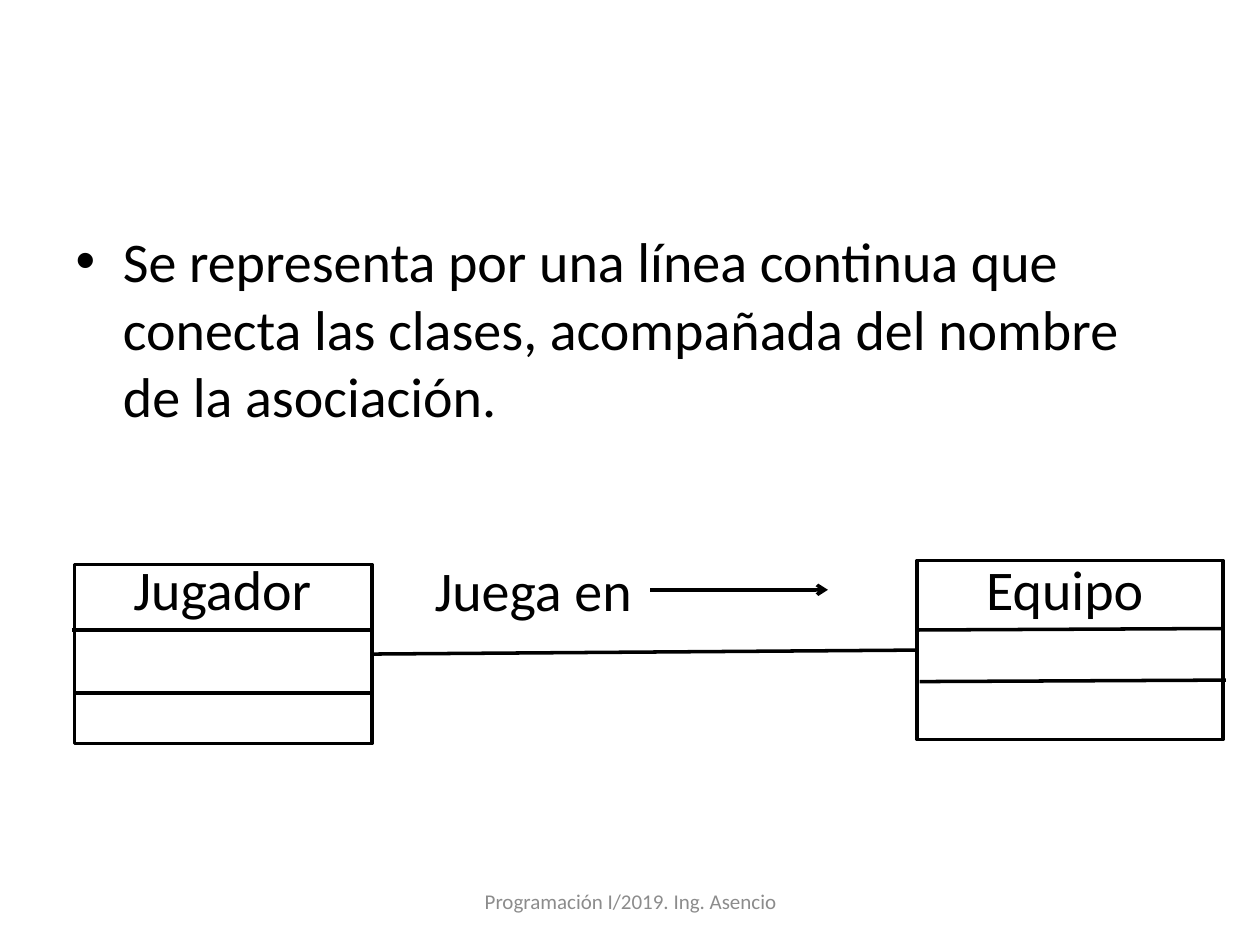
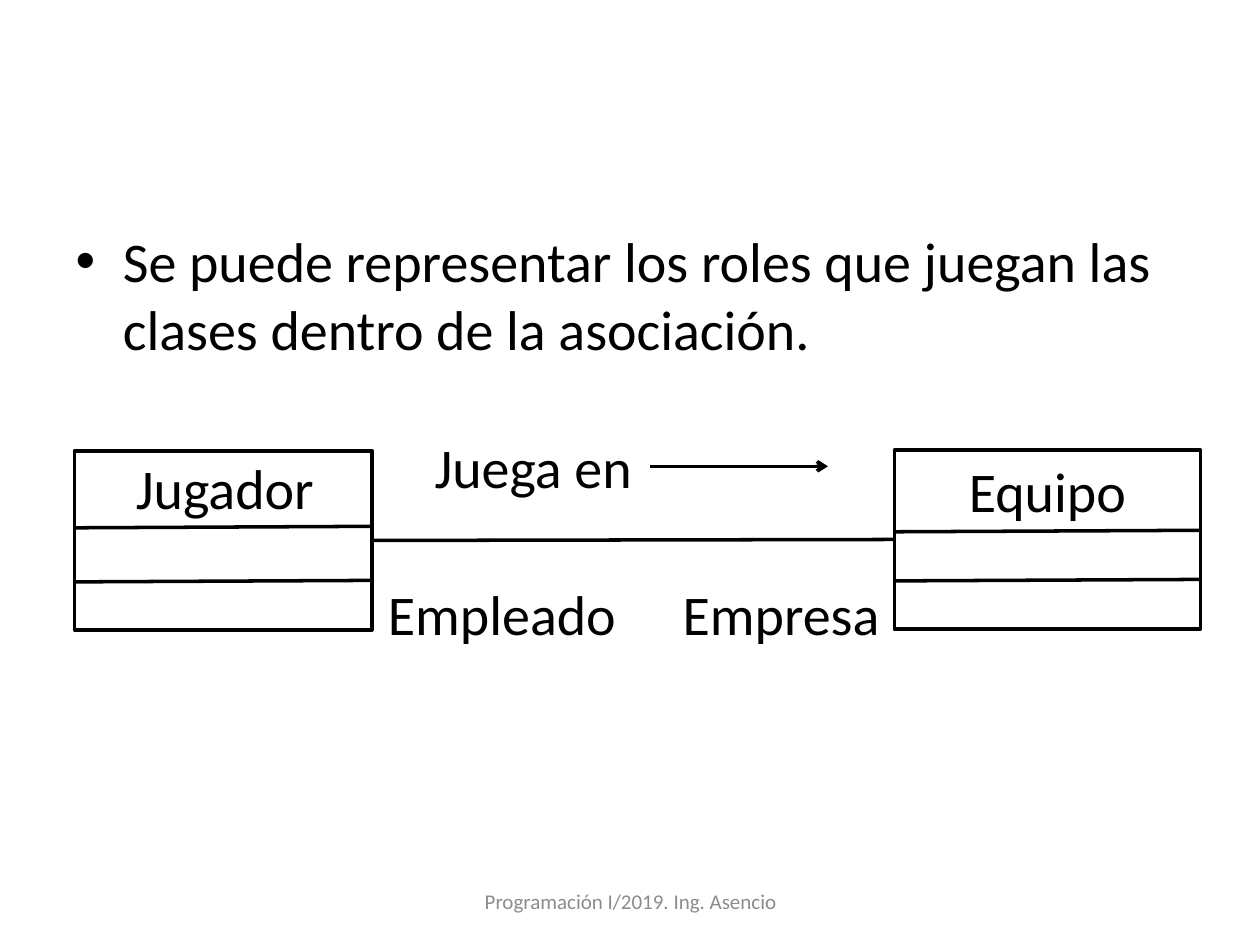
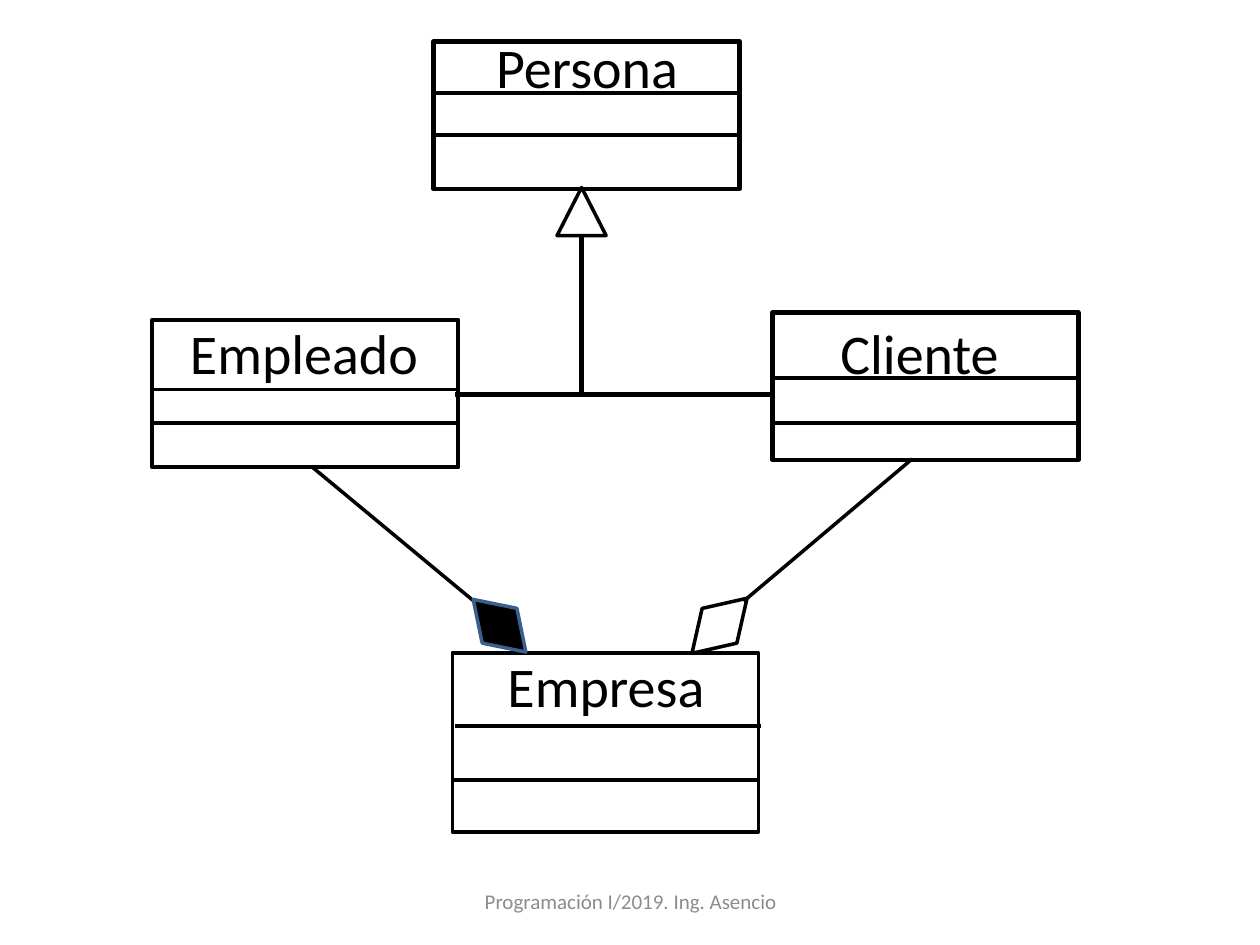
import dataclasses

import pptx
import pptx.dml.color
import pptx.enum.shapes
import pptx.enum.text
import pptx.oxml
import pptx.oxml.ns
import pptx.util

Cm = pptx.util.Cm
Pt = pptx.util.Pt
SHAPE = pptx.enum.shapes.MSO_SHAPE
ALIGN = pptx.enum.text.PP_ALIGN
ANCHOR = pptx.enum.text.MSO_ANCHOR


@dataclasses.dataclass(frozen=True)
class Theme:
    font: str = "Calibri"
    ink: str = "000000"
    muted: str = "8C8C8C"
    diamond_edge: str = "3A5F8C"
    text_size: float = 32
    footer_size: float = 12
    thin: float = 2
    thick: float = 2.5


THEME = Theme()
FOOTER = "Programación I/2019. Ing. Asencio"
CLASS_WIDTH = 6.17
LABEL_HEIGHT = 1.63
LABEL_WIDTHS = {"Jugador": 4.14, "Equipo": 3.71, "Empleado": 5.16,
                "Empresa": 4.52, "Cliente": 3.73, "Persona": 4.22}


def set_values(target, values):
    for name, value in values.items():
        setattr(target, name, value)


def rgb(color):
    return pptx.dml.color.RGBColor.from_string(color)


def format_span(span, size=THEME.text_size, color=THEME.ink):
    set_values(span.font, {"name": THEME.font, "size": Pt(size)})
    span.font.color.rgb = rgb(color)


def format_line(line, weight, color=THEME.ink):
    line.color.rgb = rgb(color)
    line.width = Pt(weight)


def add_text(page, text, left, top, width, height=LABEL_HEIGHT, wrap=False,
             size=THEME.text_size, color=THEME.ink, anchor=ANCHOR.TOP, align=ALIGN.LEFT):
    box = page.shapes.add_textbox(Cm(left), Cm(top), Cm(width), Cm(height))
    set_values(box.text_frame, {"word_wrap": wrap, "vertical_anchor": anchor})
    para = box.text_frame.paragraphs[0]
    para.alignment = align
    span = para.add_run()
    span.text = text
    format_span(span, size, color)


def add_label(page, name, left, top):
    add_text(page, name, left, top, LABEL_WIDTHS[name])


def add_line(page, start, end, weight=THEME.thin, arrow=False):
    connector = page.shapes.add_connector(
        pptx.enum.shapes.MSO_CONNECTOR.STRAIGHT, *map(Cm, start + end))
    format_line(connector.line, weight)
    properties = connector.element.spPr
    if arrow:
        outline = properties.find(pptx.oxml.ns.qn("a:ln"))
        pptx.oxml.ns.qn("a:tailEnd")
        outline.append(pptx.oxml.parse_xml(
            f'<a:tailEnd {pptx.oxml.ns.nsdecls("a")} type="arrow"/>'))
    properties.append(pptx.oxml.parse_xml(
        f'<a:effectLst {pptx.oxml.ns.nsdecls("a")}/>'))
    return connector


def add_outline(page, kind, left, top, width, height, weight=THEME.thin,
                color=THEME.ink, fill=None, rotation=0):
    shape = page.shapes.add_shape(kind, Cm(left), Cm(top), Cm(width), Cm(height))
    shape.shadow.inherit = False
    shape.rotation = rotation
    if fill:
        shape.fill.solid()
        shape.fill.fore_color.rgb = rgb(fill)
    else:
        shape.fill.background()
    format_line(shape.line, weight, color)
    return shape


def add_class(page, name, corner, label_at, dividers, width=CLASS_WIDTH,
              height=3.61, weight=THEME.thin):
    """Draw a class; each divider is (shift from the left edge, y, rise)."""
    left, top = corner
    box = add_outline(page, SHAPE.RECTANGLE, left, top, width, height, weight)
    add_label(page, name, *label_at)
    for shift, y, rise in dividers:
        start = left + shift
        add_line(page, (start, y), (start + width, y - rise))
    return box


def add_association(page, player, team, caption_top, arrow_y):
    (player_left, player_top), (team_left, team_top) = player, team
    line = add_line(page, (player_left, player_top), (team_left, team_top))
    add_text(page, "Juega en", 8.51, caption_top, 8.2, wrap=True)
    add_line(page, (13.11, arrow_y), (16.69, arrow_y), arrow=True)
    return line


def join_classes(page, player, team, caption_top, arrow_y):
    line = add_line(page, (0, 0), (1, 1))
    line.begin_connect(player, 3)
    line.end_connect(team, 1)
    add_text(page, "Juega en", 8.51, caption_top, 8.2, wrap=True)
    add_line(page, (13.11, arrow_y), (16.69, arrow_y), arrow=True)


def add_page(deck, bullet=None):
    page = deck.slides.add_slide(deck.slide_layouts[1 if bullet else 6])
    if bullet:
        title = page.shapes.title.element
        title.getparent().remove(title)
        span = page.placeholders[1].text_frame.paragraphs[0].add_run()
        span.text = bullet
        format_span(span)
    add_text(page, FOOTER, 8.69, 17.65, 8.05, 1.02, wrap=True,
             size=THEME.footer_size, color=THEME.muted,
             anchor=ANCHOR.MIDDLE, align=ALIGN.CENTER)
    return page


def build_association(deck):
    page = add_page(deck, "Se representa por una línea continua que conecta las clases, "
                          "acompañada del nombre de la asociación.")
    player = add_class(page, "Jugador", (1.5, 11.38), (2.44, 11.05),
                       [(-0.05, 12.7, 0), (0, 13.97, 0)], width=6)
    team = add_class(page, "Equipo", (18.49, 11.3), (19.63, 11.05),
                     [(0, 12.7, 0.03), (0.05, 13.74, 0.03)])
    join_classes(page, player, team, 11.07, 11.89)


def build_roles(deck):
    page = add_page(deck, "Se puede representar los roles que juegan las clases "
                          "dentro de la asociación.")
    player = add_class(page, "Jugador", (1.5, 9.09), (2.49, 9.02),
                       [(0, 10.64, 0.03), (0, 11.73, 0.03)], width=6)
    team = add_class(page, "Equipo", (18.03, 9.07), (19.28, 9.07),
                     [(0.03, 10.72, 0.03), (0.03, 11.71, 0.03)])
    join_classes(page, player, team, 8.59, 9.4)
    add_label(page, "Empleado", 7.57, 11.56)
    add_label(page, "Empresa", 13.51, 11.56)


def build_class_diagram(deck):
    page = add_page(deck)
    # Classes
    small = {"height": 2.97, "weight": THEME.thick}
    add_class(page, "Empleado", (3.07, 6.45), (3.58, 6.3),
              [(-0.05, 7.85, 0), (-0.05, 8.53, 0)], **small)
    add_class(page, "Cliente", (15.57, 6.3), (16.69, 6.3),
              [(-0.03, 7.62, 0), (-0.03, 8.53, 0)], **small)
    add_class(page, "Persona", (8.74, 0.84), (9.75, 0.53),
              [(-0.05, 1.88, 0), (-0.05, 2.72, 0)], **small)
    add_class(page, "Empresa", (9.12, 13.16), (9.98, 13),
              [(0.05, 14.63, 0), (0, 15.72, 0)])
    # Inheritance
    add_line(page, (9.17, 7.95), (15.57, 7.95), THEME.thick)
    add_outline(page, SHAPE.ISOSCELES_TRIANGLE, 11.23, 3.78, 0.99, 0.97)
    add_line(page, (11.72, 4.75), (11.72, 7.95), THEME.thick)
    # Composition and aggregation
    add_line(page, (6.3, 9.42), (9.7, 12.24))
    add_line(page, (18.39, 9.25), (14.99, 12.12))
    add_outline(page, SHAPE.DIAMOND, 13.72, 12.12, 1.57, 0.99, rotation=315)
    add_outline(page, SHAPE.FLOWCHART_DECISION, 9.32, 12.12, 1.5, 0.99,
                color=THEME.diamond_edge, fill=THEME.ink, rotation=45)


def main():
    deck = pptx.Presentation()
    set_values(deck, {"slide_width": Cm(25.4), "slide_height": Cm(19.05)})
    build_association(deck)
    build_roles(deck)
    build_class_diagram(deck)
    deck.save("out.pptx")


if __name__ == "__main__":
    main()
